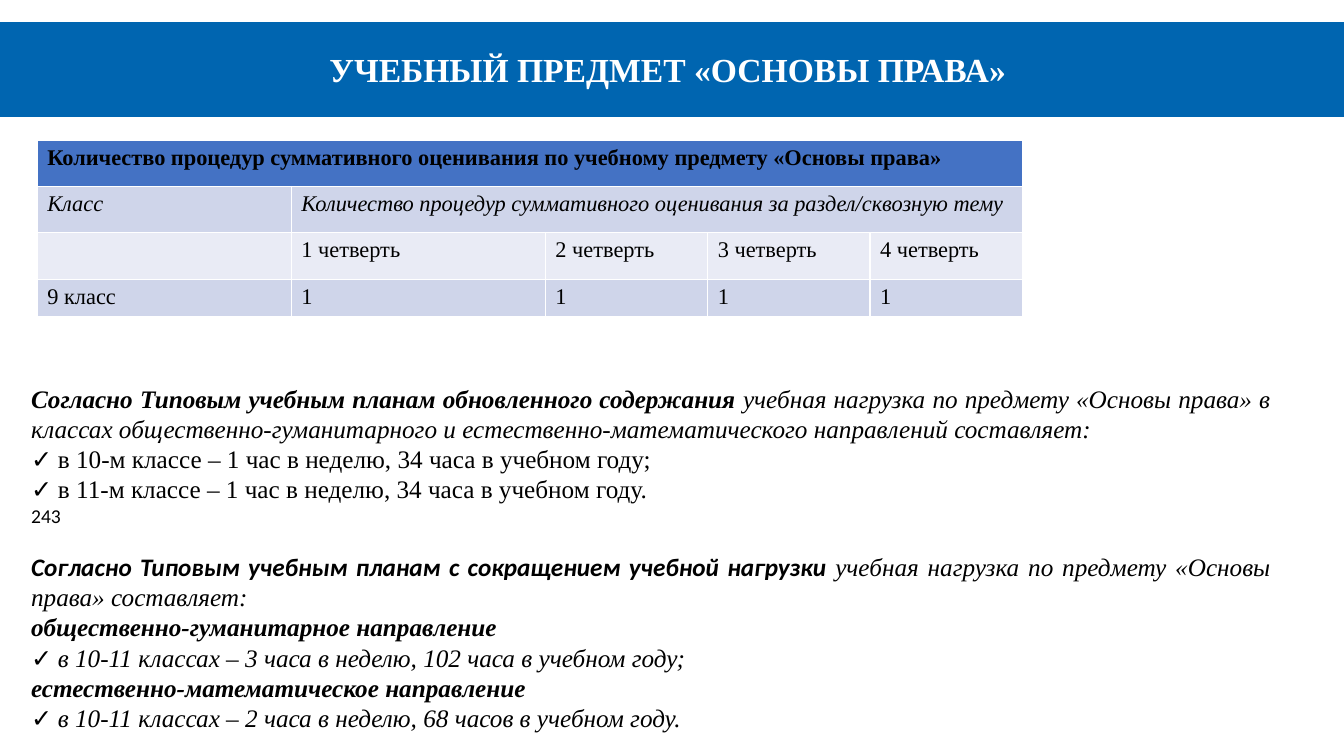
from pptx import Presentation
from pptx.dml.color import RGBColor
from pptx.enum.shapes import MSO_SHAPE
from pptx.enum.text import MSO_ANCHOR, PP_ALIGN
from pptx.util import Inches, Pt

SERIF = "Times New Roman"
SANS = "Calibri"


def color(hex_string):
    return RGBColor.from_string(hex_string)


class SlideBuilder:
    """Holds the style and the current slide."""

    banner_fill = "0065B0"
    header_fill = "4472C4"
    band_fills = ("CFD5EA", "E9EBF5")
    text_color = "000000"
    light_color = "FFFFFF"

    def __init__(self, presentation):
        self.slide = presentation.slides.add_slide(presentation.slide_layouts[6])

    def add_run(self, paragraph, text, size=18, style="", font=SERIF, text_color=None):
        """Style is any mix of the letters b (bold) and i (italic)."""
        run = paragraph.add_run()
        run.text = text
        run.font.name = font
        run.font.size = Pt(size)
        run.font.bold = "b" in style
        run.font.italic = "i" in style
        run.font.color.rgb = color(text_color or self.text_color)

    def add_banner(self, text, left, top, width, height):
        shape = self.slide.shapes.add_shape(
            MSO_SHAPE.RECTANGLE, Inches(left), Inches(top), Inches(width), Inches(height))
        shape.shadow.inherit = False
        shape.fill.solid()
        shape.fill.fore_color.rgb = color(self.banner_fill)
        shape.line.fill.background()
        shape.text_frame.word_wrap = True
        shape.text_frame.vertical_anchor = MSO_ANCHOR.MIDDLE
        paragraph = shape.text_frame.paragraphs[0]
        paragraph.alignment = PP_ALIGN.CENTER
        self.add_run(paragraph, text, 24, "b", text_color=self.light_color)

    def add_table(self, rows, row_styles, left, top, widths, heights):
        """A row shorter than the table has its last cell merged to the right edge."""
        table = self.slide.shapes.add_table(
            len(rows), len(widths), Inches(left), Inches(top),
            Inches(sum(widths)), Inches(sum(heights))).table
        for column, width in zip(table.columns, widths):
            column.width = Inches(width)
        for row, height in zip(table.rows, heights):
            row.height = Inches(height)
        for row_index, texts in enumerate(rows):
            fill = self.band_fills[(row_index - 1) % 2] if row_index else self.header_fill
            for column_index in range(len(widths)):
                cell = table.cell(row_index, column_index)
                cell.fill.solid()
                cell.fill.fore_color.rgb = color(fill)
            for column_index, text in enumerate(texts):
                if text:
                    paragraph = table.cell(row_index, column_index).text_frame.paragraphs[0]
                    self.add_run(paragraph, text, 16, row_styles[row_index])
            if len(texts) < len(widths):
                last_cell = table.cell(row_index, len(texts) - 1)
                last_cell.merge(table.cell(row_index, len(widths) - 1))

    def add_text(self, paragraphs, left, top, width, height):
        """Each paragraph is its space before in points and its runs."""
        box = self.slide.shapes.add_textbox(
            Inches(left), Inches(top), Inches(width), Inches(height))
        frame = box.text_frame
        frame.word_wrap = True
        for index, (space_before, runs) in enumerate(paragraphs):
            paragraph = frame.add_paragraph() if index else frame.paragraphs[0]
            paragraph.alignment = PP_ALIGN.JUSTIFY
            paragraph.space_before = Pt(space_before)
            for run in runs:
                self.add_run(paragraph, *run)


def checked(text, style=""):
    return 0, [("✓ ", 18, "", SANS), (text, 18, style)]


def main():
    presentation = Presentation()
    presentation.slide_width = Inches(13.33)
    presentation.slide_height = Inches(7.5)
    builder = SlideBuilder(presentation)

    # Title banner
    builder.add_banner("УЧЕБНЫЙ ПРЕДМЕТ «ОСНОВЫ ПРАВА» ", 0, 0.22, 13.33, 0.94)

    # Assessment table
    builder.add_table(
        rows=[
            ["Количество процедур суммативного оценивания по учебному предмету «Основы права»"],
            ["Класс", "Количество процедур суммативного оценивания за раздел/сквозную тему"],
            [""] + [f"{quarter} четверть" for quarter in range(1, 5)],
            ["9 класс"] + ["1"] * 4,
        ],
        row_styles=["b", "i", "", ""],
        left=0.37, top=1.39,
        widths=[2.52, 2.52, 1.61, 1.61, 1.51],
        heights=[0.46, 0.46, 0.46, 0.37])

    # Study load
    builder.add_text([
        (0, [("Согласно Типовым учебным планам обновленного содержания ", 18, "bi"),
             ("учебная нагрузка по предмету «Основы права» в классах "
              "общественно-гуманитарного и естественно-математического "
              "направлений составляет: ", 18, "i")]),
        checked("в 10-м классе – 1 час в неделю, 34 часа в учебном году; "),
        checked("в 11-м классе – 1 час в неделю, 34 часа в учебном году. "),
        (0, [("243 ", 14, "", SANS)]),
        (17, [("Согласно Типовым учебным планам с сокращением учебной нагрузки ",
               18, "bi", SANS),
              ("учебная нагрузка по предмету «Основы права» составляет: ", 18, "i")]),
        (0, [("общественно-гуманитарное направление ", 18, "bi")]),
        checked("в 10-11 классах – 3 часа в неделю, 102 часа в учебном году; ", "i"),
        (0, [("естественно-математическое направление ", 18, "bi")]),
        checked("в 10-11 классах – 2 часа в неделю, 68 часов в учебном году.", "i"),
    ], 0.21, 3.75, 12.49, 3.6)

    presentation.save("out.pptx")


if __name__ == "__main__":
    main()
